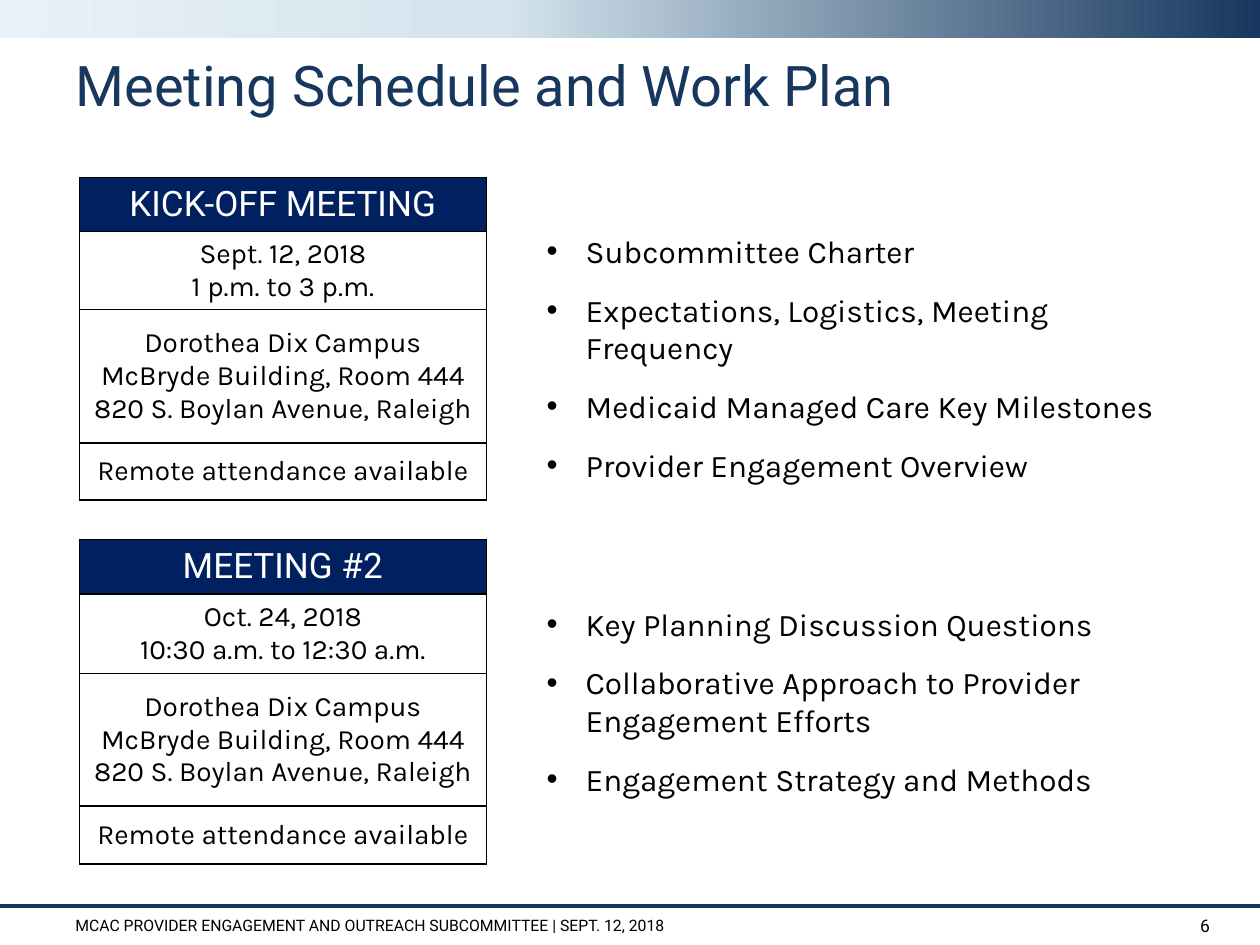
from copy import deepcopy
from dataclasses import dataclass

from pptx import Presentation
from pptx.dml.color import RGBColor
from pptx.enum.shapes import MSO_CONNECTOR, MSO_SHAPE
from pptx.enum.text import MSO_ANCHOR, PP_ALIGN
from pptx.oxml.ns import qn
from pptx.util import Inches, Pt
from lxml.etree import SubElement


@dataclass(frozen=True)
class Theme:
    navy: str = "17375E"
    header: str = "002060"
    black: str = "000000"
    white: str = "FFFFFF"
    band: tuple = ((0, "17375E"), (0.6, "D3E4ED"), (1, "E9F1F6"))
    heading_font: str = "Roboto"
    body_font: str = "Karla"
    title: float = 32
    table_head: float = 20
    table_body: float = 16
    bullet: float = 18
    number: float = 10
    footer: float = 9


T = Theme()
VENUE = ["Dorothea Dix Campus", "McBryde Building, Room 444",
         "820 S. Boylan Avenue, Raleigh"]
REMOTE = ["Remote attendance available"]

KICK_OFF = [["KICK-OFF MEETING"], ["Sept. 12, 2018", "1 p.m. to 3 p.m."], VENUE, REMOTE]
MEETING_2 = [["MEETING #2"], ["Oct. 24, 2018", "10:30 a.m. to 12:30 a.m."], VENUE, REMOTE]

KICK_OFF_TOPICS = ["Subcommittee Charter",
                   "Expectations, Logistics, Meeting Frequency",
                   "Medicaid Managed Care Key Milestones",
                   "Provider Engagement Overview"]
MEETING_2_TOPICS = ["Key Planning Discussion Questions",
                    "Collaborative Approach to Provider Engagement Efforts",
                    "Engagement Strategy and Methods"]


def rgb(color):
    return RGBColor.from_string(color)


def write(tf, lines, size, font, color=T.black, align=PP_ALIGN.LEFT):
    """Put one paragraph per line into a text frame."""
    for i, line in enumerate(lines):
        p = tf.paragraphs[0] if i == 0 else tf.add_paragraph()
        p.alignment = align
        r = p.add_run()
        r.text = line
        r.font.size, r.font.name = Pt(size), font
        r.font.color.rgb = rgb(color)


def add_text(s, box, lines, size, font, align=PP_ALIGN.LEFT, anchor=MSO_ANCHOR.MIDDLE):
    tf = s.shapes.add_textbox(*map(Inches, box)).text_frame
    tf.word_wrap = True
    tf.vertical_anchor = anchor
    write(tf, lines, size, font, align=align)
    return tf


def add_bullets(s, box, topics):
    tf = add_text(s, box, topics, T.bullet, T.body_font, anchor=MSO_ANCHOR.TOP)
    for p in tf.paragraphs:
        p.space_after = Pt(12)
        pPr = p._p.get_or_add_pPr()
        pPr.set("marL", str(Inches(0.31)))
        pPr.set("indent", str(-Inches(0.31)))
        SubElement(pPr, qn("a:buFont"), typeface="Arial")
        SubElement(pPr, qn("a:buChar"), char="•")


def add_borders(cell):
    tcPr = cell._tc.get_or_add_tcPr()
    for i, side in enumerate(("lnL", "lnR", "lnT", "lnB")):
        ln = tcPr.makeelement(qn(f"a:{side}"), {"w": str(Pt(1))})
        SubElement(SubElement(ln, qn("a:solidFill")), qn("a:srgbClr"), val=T.black)
        tcPr.insert(i, ln)


def add_meeting(s, top, rows, heights):
    table = s.shapes.add_table(len(rows), 1, Inches(0.63), Inches(top),
                               Inches(3.23), Inches(sum(heights))).table
    table.horz_banding = False
    for i, (lines, height) in enumerate(zip(rows, heights)):
        table.rows[i].height = Inches(height)
        cell = table.cell(i, 0)
        cell.vertical_anchor = MSO_ANCHOR.MIDDLE
        if i == 0:
            cell.fill.solid()
            cell.fill.fore_color.rgb = rgb(T.header)
            style = T.table_head, T.heading_font, T.white
        else:
            cell.fill.background()
            style = T.table_body, T.body_font, T.black
        write(cell.text_frame, lines, *style, align=PP_ALIGN.CENTER)
        add_borders(cell)


def add_band(s):
    sp = s.shapes.add_shape(MSO_SHAPE.RECTANGLE, 0, 0, Inches(10), Inches(0.3))
    sp.shadow.inherit = False
    sp.line.fill.background()
    sp.fill.gradient()
    sp.fill.gradient_angle = 180
    stops = sp._element.spPr.find(qn("a:gradFill")).find(qn("a:gsLst"))
    stops.append(deepcopy(stops[0]))
    for stop, (position, color) in zip(sp.fill.gradient_stops, T.band):
        stop.position = position
        stop.color.rgb = rgb(color)


def add_footer_rule(s):
    rule = s.shapes.add_connector(MSO_CONNECTOR.STRAIGHT, 0, Inches(7.19),
                                  Inches(10), Inches(7.19))
    rule.line.color.rgb = rgb(T.navy)
    rule.line.width = Pt(2.25)
    SubElement(rule._element.spPr, qn("a:effectLst"))


def set_title(s, text):
    title = s.shapes.title
    title.left, title.top, title.width, title.height = map(Inches, (0.5, 0.4, 9, 0.6))
    tf = title.text_frame
    tf.vertical_anchor = MSO_ANCHOR.MIDDLE
    write(tf, [text], T.title, T.heading_font, T.navy)
    tf.paragraphs[0].line_spacing = 0.9


def main():
    prs = Presentation()
    prs.slide_width, prs.slide_height = Inches(10), Inches(7.5)
    s = prs.slides.add_slide(prs.slide_layouts[5])
    add_band(s)
    add_footer_rule(s)
    set_title(s, "Meeting Schedule and Work Plan")
    add_meeting(s, 1.41, KICK_OFF, (0.4, 0.58, 1.06, 0.45))
    add_bullets(s, (4.24, 1.79, 5.13, 1.82), KICK_OFF_TOPICS)
    add_meeting(s, 4.28, MEETING_2, (0.39, 0.57, 1.05, 0.46))
    add_bullets(s, (4.24, 4.75, 5.36, 1.65), MEETING_2_TOPICS)
    add_text(s, (0.5, 7.19, 8.4, 0.31),
             ["MCAC PROVIDER ENGAGEMENT AND OUTREACH SUBCOMMITTEE | SEPT. 12, 2018"],
             T.footer, T.heading_font)
    add_text(s, (9.08, 7.19, 0.62, 0.31), ["6"], T.number, T.heading_font, PP_ALIGN.RIGHT)
    prs.save("out.pptx")


if __name__ == "__main__":
    main()
